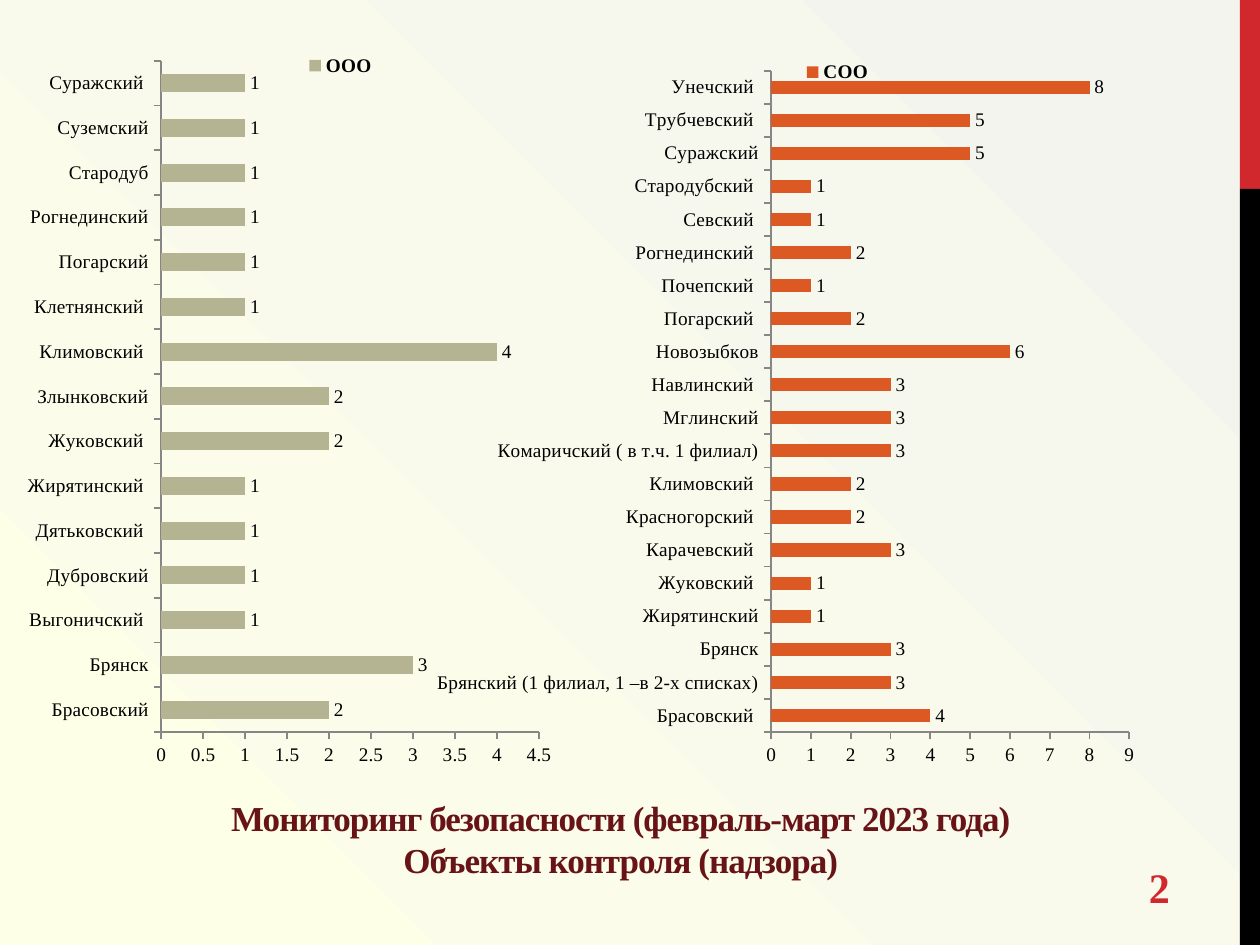
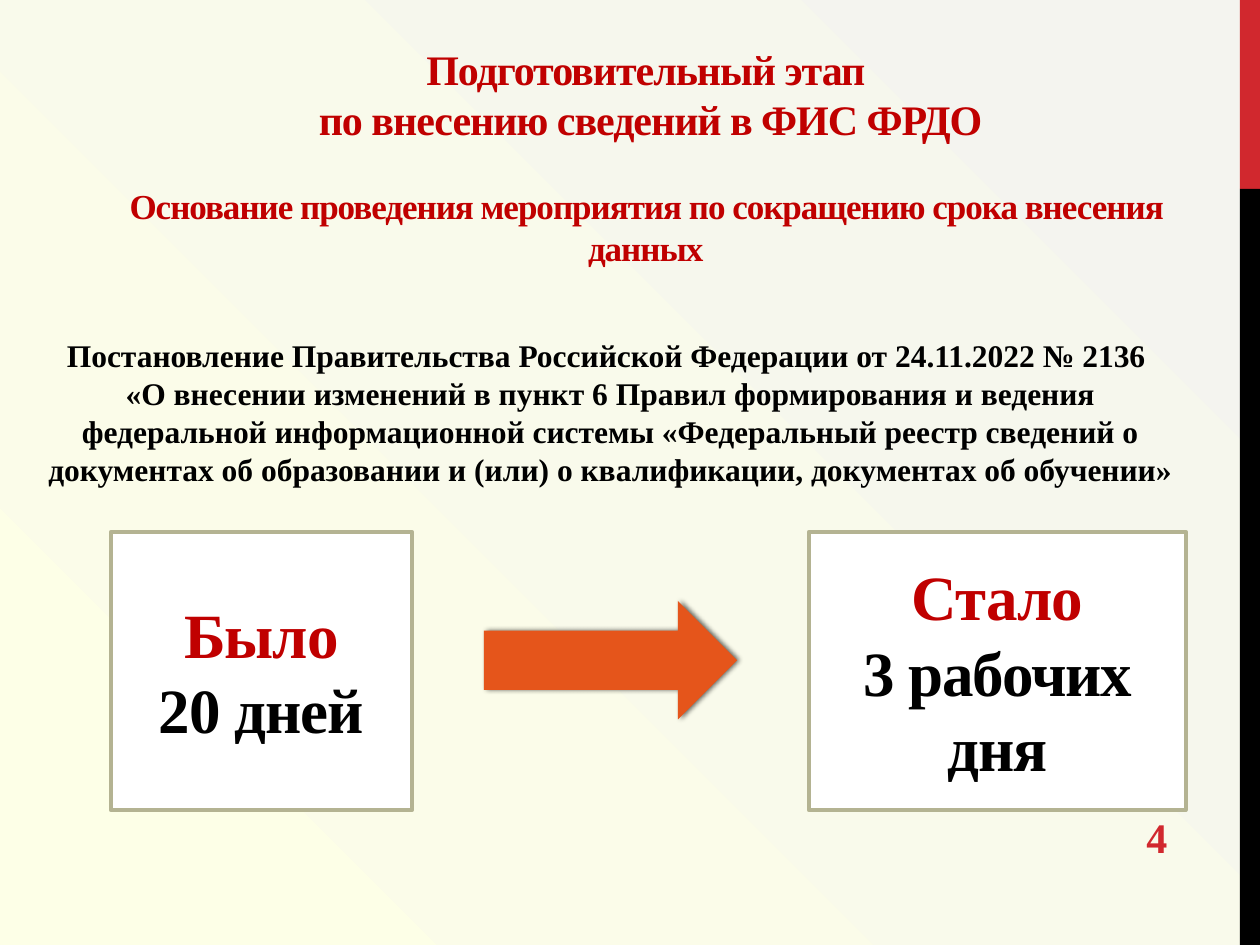
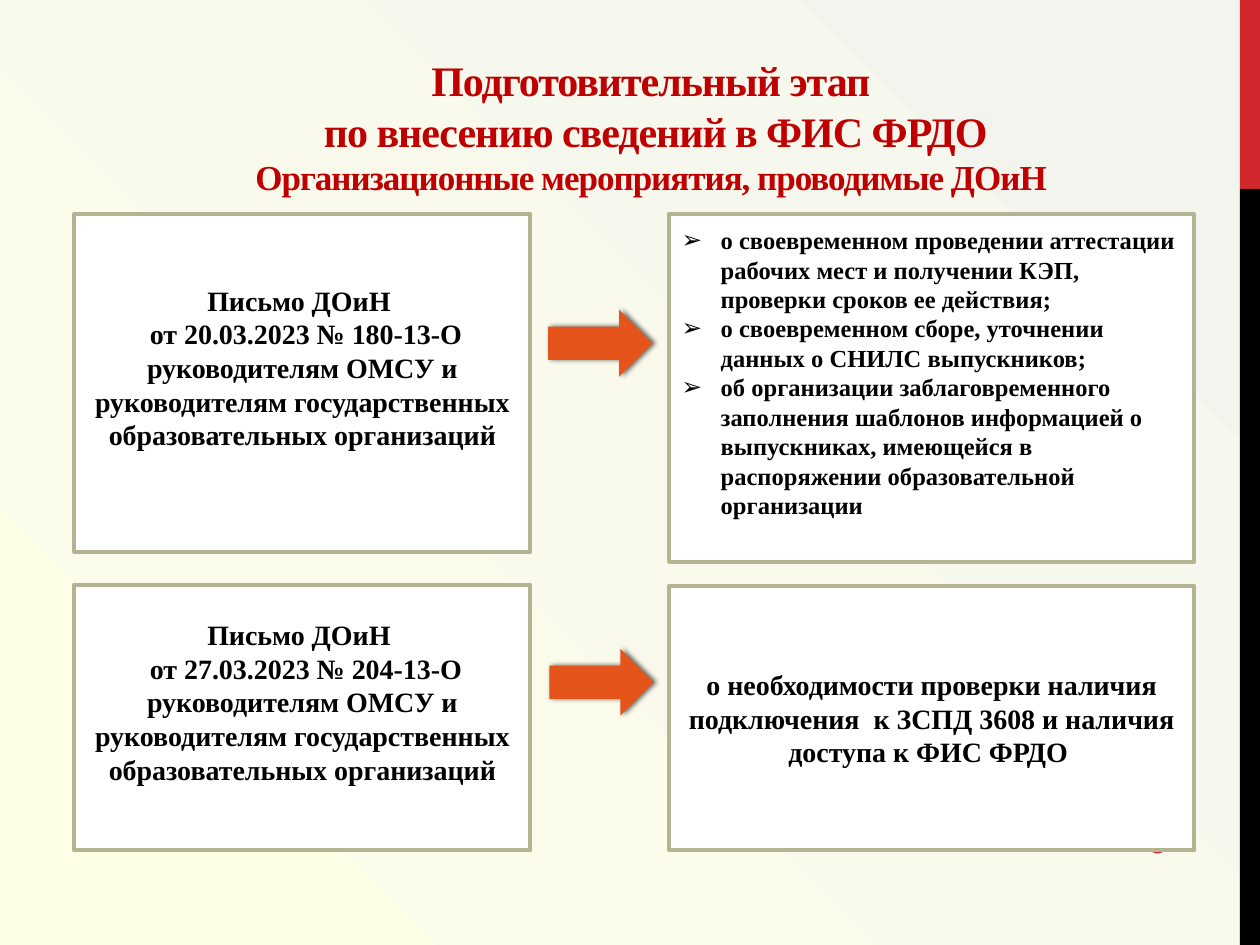
from pptx import Presentation
from pptx.chart.data import CategoryChartData
from pptx.dml.color import RGBColor
from pptx.enum.chart import XL_CHART_TYPE as ChartType
from pptx.enum.chart import XL_LABEL_POSITION as LabelPosition
from pptx.enum.chart import XL_LEGEND_POSITION as LegendPosition
from pptx.enum.chart import XL_TICK_MARK as TickMark
from pptx.enum.shapes import MSO_SHAPE as Preset
from pptx.enum.text import MSO_ANCHOR as Anchor
from pptx.enum.text import MSO_AUTO_SIZE as AutoSize
from pptx.enum.text import PP_ALIGN as Align
from pptx.oxml import parse_xml
from pptx.oxml.ns import nsdecls, qn
from pptx.util import Inches, Pt

# Shared style
FONT = "Times New Roman"
CREAM = RGBColor(0xFD, 0xFF, 0xE7)
MIST = RGBColor(0xF4, 0xF4, 0xEF)
WHITE = RGBColor(0xFF, 0xFF, 0xFF)
BLACK = RGBColor(0x00, 0x00, 0x00)
RED = RGBColor(0xD1, 0x28, 0x2E)
TITLE_RED = RGBColor(0xC0, 0x00, 0x00)
MAROON = RGBColor(0x68, 0x14, 0x17)
OLIVE = RGBColor(0xB4, 0xB3, 0x92)
ARROW_ORANGE = RGBColor(0xE5, 0x55, 0x1B)
BAR_ORANGE = RGBColor(0xDD, 0x59, 0x24)
AXIS_GREY = RGBColor(0x86, 0x86, 0x86)
TITLE_ONLY, TITLE_AND_LIST = 5, 1
TIGHT = -60

ARROW_SHADOW = (
    f'<a:effectLst {nsdecls("a")}><a:outerShdw blurRad="38100" dist="19050" dir="0" rotWithShape="0">'
    '<a:srgbClr val="000000"><a:alpha val="60000"/></a:srgbClr></a:outerShdw></a:effectLst>')

# Slide texts and values
STAGE = [("Подготовительный этап", 24, TITLE_RED), (" по внесению сведений в ФИС ФРДО", 24, TITLE_RED)]

SECONDARY_SCHOOLS = {
    "Брасовский ": 4, "Брянский (1 филиал, 1 –в 2-х списках)": 3, "Брянск": 3,
    "Жирятинский": 1, "Жуковский ": 1, "Карачевский ": 3, "Красногорский ": 2,
    "Климовский ": 2, "Комаричский ( в т.ч. 1 филиал)": 3, "Мглинский": 3,
    "Навлинский ": 3, "Новозыбков": 6, "Погарский ": 2, "Почепский ": 1,
    "Рогнединский ": 2, "Севский ": 1, "Стародубский ": 1, "Суражский": 5,
    "Трубчевский ": 5, "Унечский ": 8}

BASIC_SCHOOLS = {
    "Брасовский": 2, "Брянск": 3, "Выгоничский ": 1, "Дубровский": 1,
    "Дятьковский ": 1, "Жирятинский ": 1, "Жуковский ": 2, "Злынковский": 2,
    "Климовский ": 4, "Клетнянский ": 1, "Погарский": 1, "Рогнединский": 1,
    "Стародуб": 1, "Суземский": 1, "Суражский ": 1}

DECREE = [
    "Постановление Правительства Российской Федерации от 24.11.2022 № 2136 ",
    "«О внесении изменений в пункт 6 Правил формирования и ведения федеральной "
    "информационной системы «Федеральный реестр сведений о документах об образовании "
    "и (или) о квалификации, документах об обучении»"]

LETTER_TASKS = [
    "о своевременном проведении аттестации рабочих мест и получении КЭП,  проверки сроков ее действия;",
    "о своевременном сборе, уточнении данных о СНИЛС выпускников;",
    "об организации заблаговременного заполнения шаблонов информацией о выпускниках, "
    "имеющейся в распоряжении образовательной организации"]

ACCESS_CHECK = ("о необходимости проверки наличия подключения  к ЗСПД 3608 "
                "и наличия доступа к ФИС ФРДО ")


def black_lines(texts, size):
    return [(text, size, BLACK) for text in texts]


def letter(reference):
    return black_lines(["Письмо ДОиН ", f" от {reference}", "руководителям ОМСУ и",
                        "руководителям государственных", "образовательных организаций"], 16)


def box(left, top, width, height):
    return [Inches(length) for length in (left, top, width, height)]


def apply(target, formats):
    for name, value in formats.items():
        setattr(target, name, value)


def layout_inside(area, part, inner=False):
    """Manual chart layout that puts part (inches) inside the chart's area."""
    x, y = ((part[i] - area[i]) / area[i + 2] for i in (0, 1))
    w, h = (part[i] / area[i] for i in (2, 3))
    target = '<c:layoutTarget val="inner"/>' if inner else ""
    return parse_xml(
        f'<c:layout {nsdecls("c")}><c:manualLayout>{target}'
        '<c:xMode val="edge"/><c:yMode val="edge"/>'
        f'<c:x val="{x:.3f}"/><c:y val="{y:.3f}"/><c:w val="{w:.3f}"/><c:h val="{h:.3f}"/>'
        '</c:manualLayout></c:layout>')


class Deck:
    def __init__(self):
        self.presentation = Presentation()
        apply(self.presentation, {"slide_width": Inches(10), "slide_height": Inches(7.5)})
        self.slide = None
        self.paint_background()

    def paint_background(self):
        master = self.presentation.slide_master
        fill = master.background.fill
        fill.gradient()
        for stop, color, position in zip(fill.gradient_stops, (CREAM, MIST), (0, 0.99)):
            stop.color.rgb = color
            stop.position = position
        gradient = next(master.element.iter(qn("a:gradFill")))
        gradient.remove(gradient.find(qn("a:lin")))
        gradient.append(parse_xml(
            f'<a:path {nsdecls("a")} path="circle"><a:fillToRect t="100000" r="100000"/></a:path>'))

    def add_slide(self, layout):
        self.slide = self.presentation.slides.add_slide(self.presentation.slide_layouts[layout])
        if len(self.presentation.slides) == 1:
            self.add_master_bands()

    def add_master_bands(self):
        tree = self.presentation.slide_master.shapes.element
        bands = [(0, 1.5, RED), (1.5, 6, BLACK)]
        for number, (top, height, color) in enumerate(bands, 20):
            band = self.shape(Preset.RECTANGLE, (9.84, top, 0.16, height), color)
            band.element.nvSpPr.cNvPr.set("id", str(number))
            tree.append(band.element)

    def set_lines(self, shape, lines, align=Align.CENTER, anchor=Anchor.MIDDLE, spacing=0, bottom=0.05):
        frame = shape.text_frame
        apply(frame, {"word_wrap": True, "auto_size": AutoSize.NONE, "vertical_anchor": anchor,
                      "margin_bottom": Inches(bottom)})
        for index, (text, size, color) in enumerate(lines):
            paragraph = frame.add_paragraph() if index else frame.paragraphs[0]
            apply(paragraph, {"alignment": align, "space_before": Pt(0)})
            run = paragraph.add_run()
            run.text = text
            apply(run.font, {"name": FONT, "size": Pt(size), "bold": True})
            run.font.color.rgb = color
            if spacing:
                run.font._element.set("spc", str(spacing))
        return frame

    def place(self, shape, area):
        apply(shape, dict(zip(("left", "top", "width", "height"), box(*area))))

    def title(self, area, lines, anchor=Anchor.BOTTOM):
        shape = self.slide.shapes.title
        self.place(shape, area)
        return self.set_lines(shape, lines, anchor=anchor, spacing=TIGHT)

    def text(self, area, lines, **options):
        return self.set_lines(self.slide.shapes.add_textbox(*box(*area)), lines, **options)

    def page_number(self, number, left=9, top=6.44):
        self.text((left, top, 1.44, 0.4), [(str(number), 24, RED)], align=Align.LEFT)

    def shape(self, preset, area, color):
        shape = self.slide.shapes.add_shape(preset, *box(*area))
        shape.shadow.inherit = False
        shape.fill.solid()
        shape.fill.fore_color.rgb = color
        shape.line.fill.background()
        return shape

    def outline(self, shape):
        shape.line.color.rgb = OLIVE
        shape.line.width = Pt(2.25)

    def card(self, area, lines, **options):
        shape = self.shape(Preset.RECTANGLE, area, WHITE)
        self.outline(shape)
        self.set_lines(shape, lines, **options)

    def arrow(self, area):
        properties = self.shape(Preset.RIGHT_ARROW, area, ARROW_ORANGE).element.spPr
        properties.replace(properties.find(qn("a:effectLst")), parse_xml(ARROW_SHADOW))

    def bullet_card(self, area, lines):
        shape = self.slide.placeholders[1]
        self.place(shape, area)
        shape.fill.solid()
        shape.fill.fore_color.rgb = WHITE
        self.outline(shape)
        frame = self.set_lines(shape, lines, align=Align.LEFT, bottom=0.3)
        for paragraph in frame.paragraphs:
            properties = paragraph._p.get_or_add_pPr()
            properties.set("marL", str(Inches(0.31)))
            properties.set("indent", str(Inches(-0.31)))
            properties.append(parse_xml(f'<a:buChar {nsdecls("a")} char="➢"/>'))

    def bar_chart(self, area, plot_area, legend_area, name, values, color, maximum, step):
        data = CategoryChartData()
        data.categories = list(values)
        data.add_series(name, list(values.values()))
        chart = self.slide.shapes.add_chart(ChartType.BAR_CLUSTERED, *box(*area), data).chart
        apply(chart, {"has_title": False, "has_legend": True})
        apply(chart.font, {"name": FONT, "size": Pt(11)})
        chart.font.color.rgb = BLACK

        # Bars and their values
        plot = chart.plots[0]
        apply(plot, {"gap_width": 150, "vary_by_categories": False, "has_data_labels": True})
        apply(plot.data_labels, {"show_value": True, "position": LabelPosition.OUTSIDE_END})
        fill = plot.series[0].format.fill
        fill.solid()
        fill.fore_color.rgb = color

        # Axes
        for axis in (chart.category_axis, chart.value_axis):
            apply(axis, {"has_major_gridlines": False, "major_tick_mark": TickMark.OUTSIDE,
                         "minor_tick_mark": TickMark.NONE})
            axis.format.line.color.rgb = AXIS_GREY
            axis.format.line.width = Pt(1)
        apply(chart.value_axis, {"minimum_scale": 0, "maximum_scale": maximum, "major_unit": step})

        # Places of the legend and the plot
        legend = chart.legend
        apply(legend, {"position": LegendPosition.RIGHT, "include_in_layout": False})
        apply(legend.font, {"name": FONT, "size": Pt(11), "bold": True})
        legend_element = legend._element
        plot_element = next(chart.element.iter(qn("c:plotArea"))) if hasattr(chart, "element") \
            else next(chart._chartSpace.iter(qn("c:plotArea")))
        for element in (legend_element, plot_element):
            for layout in element.findall(qn("c:layout")):
                element.remove(layout)
        legend_element.find(qn("c:overlay")).addprevious(layout_inside(area, legend_area))
        plot_element.insert(0, layout_inside(area, plot_area, inner=True))


def add_monitoring_slide(deck):
    deck.add_slide(TITLE_ONLY)
    deck.page_number(2, 9.02, 6.84)
    deck.bar_chart((3.35, 0.44, 6.46, 5.75), (6.12, 0.56, 2.84, 5.25), (6.32, 0.45, 0.65, 0.24),
                   "СОО", SECONDARY_SCHOOLS, BAR_ORANGE, 9, 1)
    deck.bar_chart((0.12, 0.36, 5.04, 5.83), (1.28, 0.48, 3, 5.33), (2.38, 0.4, 0.65, 0.24),
                   "ООО", BASIC_SCHOOLS, OLIVE, 4.5, 0.5)
    deck.title((0.83, 6.27, 8.19, 0.77),
               [("Мониторинг безопасности (февраль-март 2023 года)", 20, MAROON),
                ("Объекты контроля (надзора)", 20, MAROON)], anchor=Anchor.TOP)


def add_deadline_slide(deck):
    deck.add_slide(TITLE_ONLY)
    basis = "Основание проведения мероприятия по сокращению срока внесения данных"
    title = deck.title((0.75, 0.68, 8.75, 1.5), STAGE + [(basis, 20, TITLE_RED)])
    title.paragraphs[-1].space_before = Pt(23)
    deck.page_number(4)
    deck.text((0.28, 2.62, 9.13, 1.3), black_lines(DECREE, 18), anchor=Anchor.TOP)

    # Before and after
    for left, width, heading, term in ((0.88, 2.39, "Было", "20 дней"),
                                       (6.42, 2.99, "Стало", "3 рабочих дня")):
        deck.card((left, 4.22, width, 2.21), [(heading, 36, TITLE_RED), (term, 36, BLACK)],
                  spacing=TIGHT)
    deck.arrow((3.84, 4.77, 2.01, 0.94))


def add_letters_slide(deck):
    deck.add_slide(TITLE_AND_LIST)
    deck.title((0.83, 0.36, 8.67, 1.26),
               STAGE + [("Организационные мероприятия, проводимые ДОиН", 20, TITLE_RED)])
    deck.page_number(6)

    # Letters on the left, what they ask for on the right
    deck.card((0.59, 1.7, 3.62, 2.68), letter("20.03.2023 № 180-13-О"), bottom=0.3)
    deck.card((0.59, 4.64, 3.62, 2.11), letter("27.03.2023 № 204-13-О"), bottom=0.3)
    deck.bullet_card((5.31, 1.7, 4.17, 2.76), black_lines(LETTER_TASKS, 14))
    deck.card((5.31, 4.65, 4.17, 2.1), black_lines([ACCESS_CHECK], 16))
    for left, top in ((4.35, 2.46), (4.36, 5.15)):
        deck.arrow((left, top, 0.83, 0.53))


def main():
    deck = Deck()
    add_monitoring_slide(deck)
    add_deadline_slide(deck)
    add_letters_slide(deck)
    deck.presentation.save("out.pptx")


if __name__ == "__main__":
    main()
